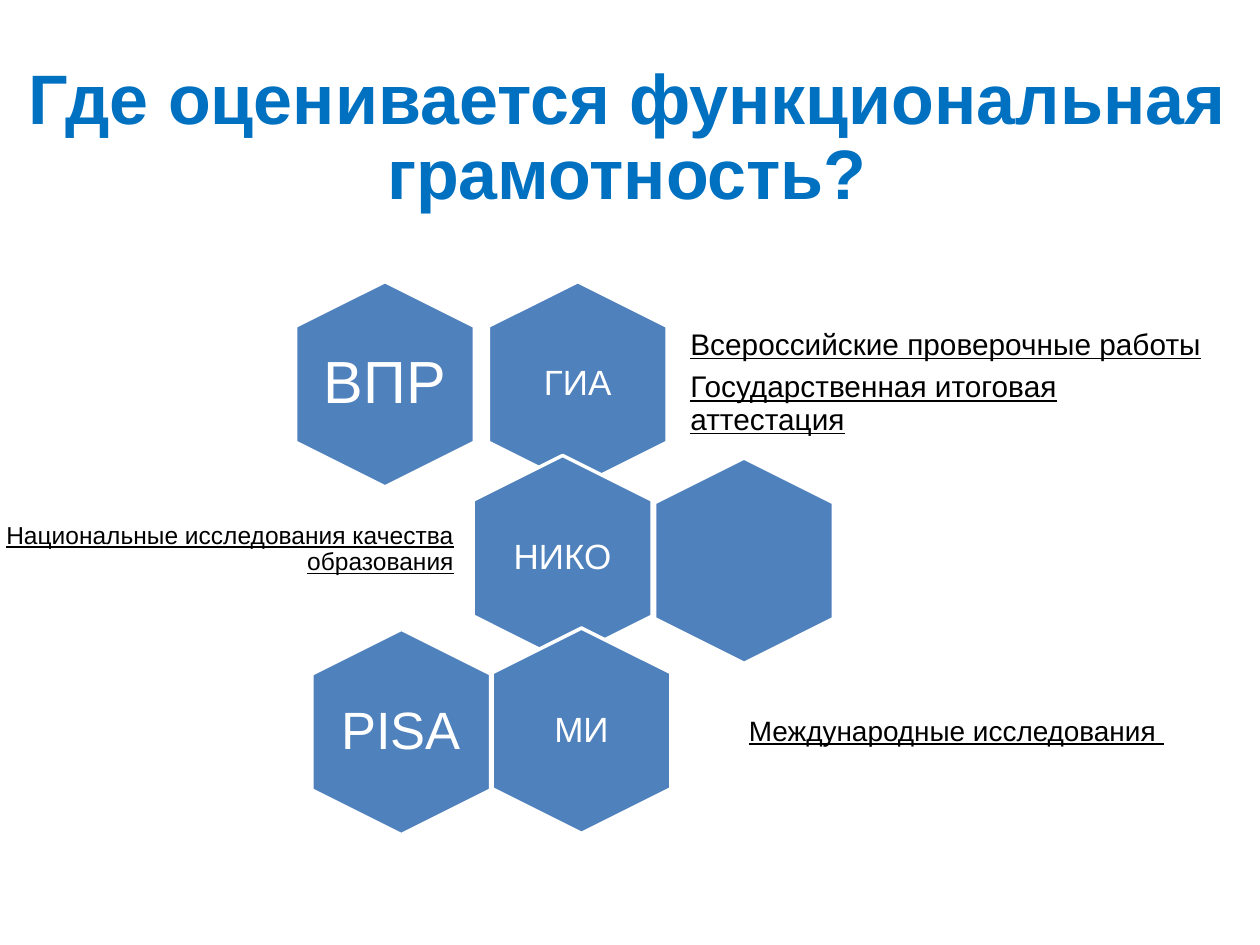
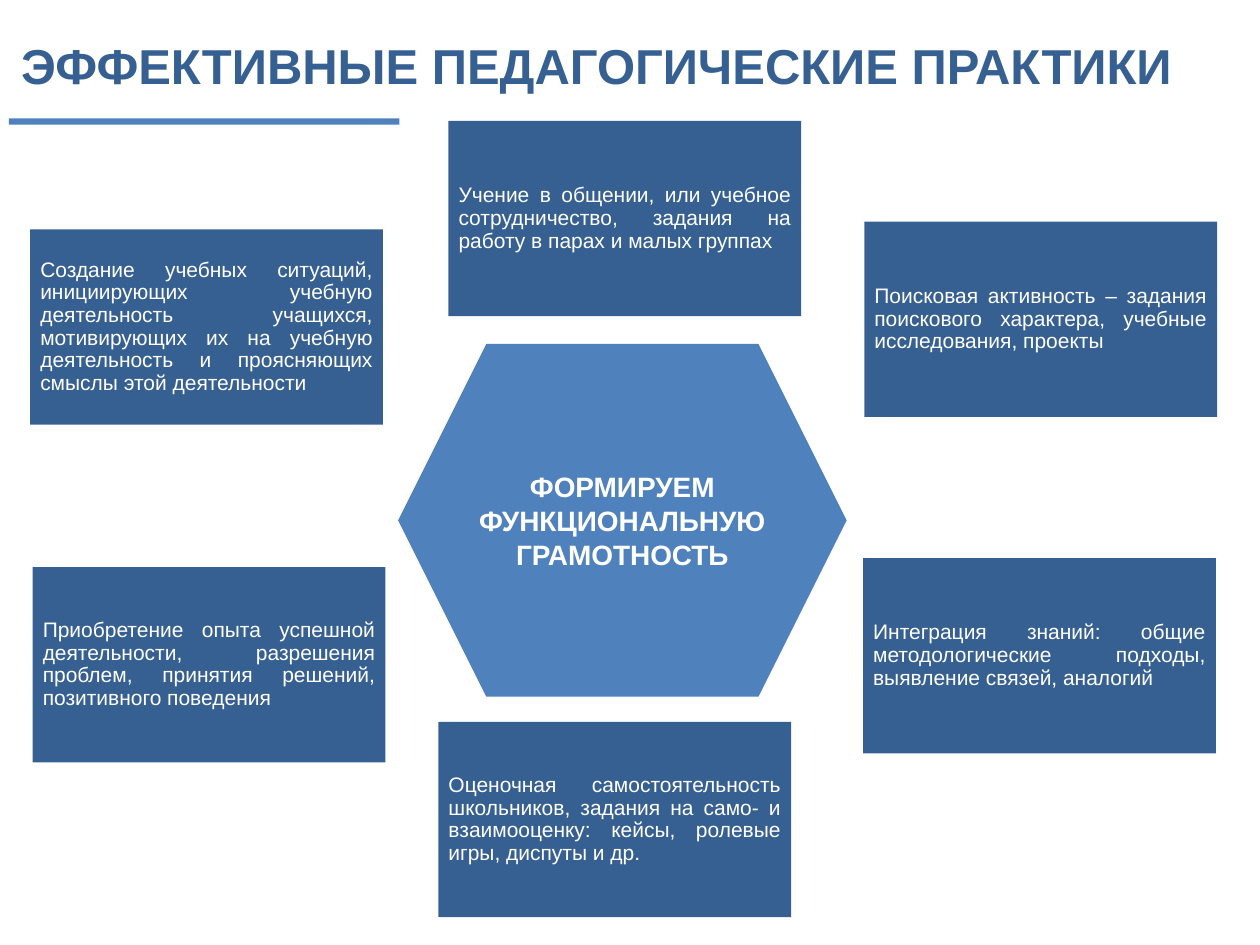
from pptx import Presentation
from pptx.dml.color import RGBColor
from pptx.enum.shapes import MSO_SHAPE
from pptx.enum.text import MSO_ANCHOR, PP_ALIGN
from pptx.util import Inches, Pt

FONT = "Arial"
WHITE, BLACK = "FFFFFF", "000000"
BLUE, NAVY, TITLE_BLUE = "4F81BD", "376092", "0070C0"
LEFT, CENTER = PP_ALIGN.LEFT, PP_ALIGN.CENTER
RIGHT, JUSTIFY = PP_ALIGN.RIGHT, PP_ALIGN.JUSTIFY

# Slide 1: where literacy is assessed
QUESTION = "Где оценивается функциональная грамотность?"
HONEYCOMB_SIZE = (1.63, 1.42)
CAPTION_SIZE = (0.98, 1.12)
# left, top, caption, text size, inset
HONEYCOMB = [
    (3.77, 2.34, "ГИА", 20, 0.08),
    (2.24, 2.34, "ВПР", 34, 0),
    (3.65, 3.72, "НИКО", 20, 0.08),
    (5.09, 3.74, "", 20, 0),
    (3.80, 5.09, "МИ", 20, 0.08),
    (2.37, 5.10, "PISA", 30, 0),
]
# box, paragraphs, text size, inset, alignment
EXPLANATIONS = [
    ((5.41, 2.55, 4.27, 0.98),
     ["Всероссийские проверочные работы", "Государственная итоговая аттестация"],
     17, 0.07, LEFT),
    ((-0.36, 4.22, 4.02, 0.28),
     ["Национальные исследования качества образования"], 14, 0.06, RIGHT),
    ((5.70, 5.53, 3.78, 0.56), ["Международные исследования "], 16, 0.07, CENTER),
]

# Slide 2: teaching practices around the goal
HEADING = "ЭФФЕКТИВНЫЕ ПЕДАГОГИЧЕСКИЕ ПРАКТИКИ"
GOAL = "ФОРМИРУЕМ ФУНКЦИОНАЛЬНУЮ ГРАМОТНОСТЬ"
PRACTICE_SIZE = (2.8, 1.55)
PRACTICES = [
    (0.26, 4.50, "Приобретение опыта успешной деятельности, разрешения проблем, "
                 "принятия решений, позитивного поведения"),
    (0.24, 1.82, "Создание учебных ситуаций, инициирующих учебную деятельность учащихся, "
                 "мотивирующих их на учебную деятельность и проясняющих смыслы этой "
                 "деятельности"),
    (3.56, 0.96, "Учение в общении, или учебное сотрудничество, задания на работу "
                 "в парах и малых группах"),
    (6.86, 1.76, "Поисковая активность – задания поискового характера, "
                 "учебные исследования, проекты"),
    (6.85, 4.43, "Интеграция знаний: общие методологические подходы, "
                 "выявление связей, аналогий"),
    (3.48, 5.73, "Оценочная самостоятельность школьников, задания на само- и "
                 "взаимооценку: кейсы, ролевые игры, диспуты и др."),
]


def rgb(color):
    return RGBColor.from_string(color)


def write(shape, paragraphs, size, color, align, inset=(0.1, 0.05), anchor=MSO_ANCHOR.MIDDLE,
          bold=False, underline=False, line_spacing=None, after=0):
    frame = shape.text_frame
    frame.word_wrap = True
    frame.vertical_anchor = anchor
    frame.margin_left = frame.margin_right = Inches(inset[0])
    frame.margin_top = frame.margin_bottom = Inches(inset[1])
    frame.text = "\n".join(paragraphs)
    for paragraph in frame.paragraphs:
        paragraph.alignment = align
        paragraph.space_after = Pt(after)
        if line_spacing:
            paragraph.line_spacing = line_spacing
        font = paragraph.font
        font.name, font.size, font.color.rgb = FONT, Pt(size), rgb(color)
        font.bold, font.underline = bold, underline


def add_text(slide, box, paragraphs, size, color, align, **style):
    textbox = slide.shapes.add_textbox(*map(Inches, box))
    write(textbox, paragraphs, size, color, align, **style)


def add_block(slide, preset, box, fill, outline=None):
    block = slide.shapes.add_shape(preset, *map(Inches, box))
    block.shadow.inherit = False
    block.fill.solid()
    block.fill.fore_color.rgb = rgb(fill)
    if outline:
        block.line.color.rgb = rgb(outline)
        block.line.width = Pt(2)
    else:
        block.line.fill.background()
    return block


def build_assessments(slide):
    # Honeycomb: upright captions centred on turned hexagons
    width, height = HONEYCOMB_SIZE
    caption_width, caption_height = CAPTION_SIZE
    for left, top, caption, size, inset in HONEYCOMB:
        cell = add_block(slide, MSO_SHAPE.HEXAGON, (left, top, width, height), BLUE, WHITE)
        cell.rotation = 90
        if caption:
            box = (left + (width - caption_width) / 2, top + (height - caption_height) / 2,
                   caption_width, caption_height)
            add_text(slide, box, [caption], size, WHITE, CENTER, inset=(inset, inset),
                     line_spacing=0.9, after=round(size * 0.35))

    # Explanations beside the honeycomb
    for box, paragraphs, size, inset, align in EXPLANATIONS:
        add_text(slide, box, paragraphs, size, BLACK, align, inset=(inset, inset),
                 underline=True, line_spacing=0.9, after=round(size * 0.35))

    # Title
    add_text(slide, (0.1, 0.31, 9.75, 1.59), [QUESTION], 40, TITLE_BLUE, CENTER,
             inset=(0, 0), bold=True, line_spacing=0.9)


def build_practices(slide):
    # Heading and its accent bar
    add_text(slide, (0.07, 0.23, 9.78, 0.57), [HEADING], 28, NAVY, JUSTIFY,
             anchor=MSO_ANCHOR.TOP, bold=True)
    add_block(slide, MSO_SHAPE.RECTANGLE, (0.07, 0.94, 3.1, 0.05), BLUE)

    # Practices around the goal
    for left, top, practice in PRACTICES:
        card = add_block(slide, MSO_SHAPE.RECTANGLE, (left, top, *PRACTICE_SIZE), NAVY)
        write(card, [practice], 12, WHITE, JUSTIFY, inset=(0.08, 0.08), line_spacing=0.9)
    goal = add_block(slide, MSO_SHAPE.HEXAGON, (3.16, 2.73, 3.56, 2.8), BLUE)
    write(goal, [GOAL], 16, WHITE, CENTER, bold=True)


def main():
    deck = Presentation()
    deck.slide_width, deck.slide_height = Inches(10), Inches(7.5)
    blank = deck.slide_layouts[6]
    for build in (build_assessments, build_practices):
        build(deck.slides.add_slide(blank))
    deck.save("out.pptx")


if __name__ == "__main__":
    main()
